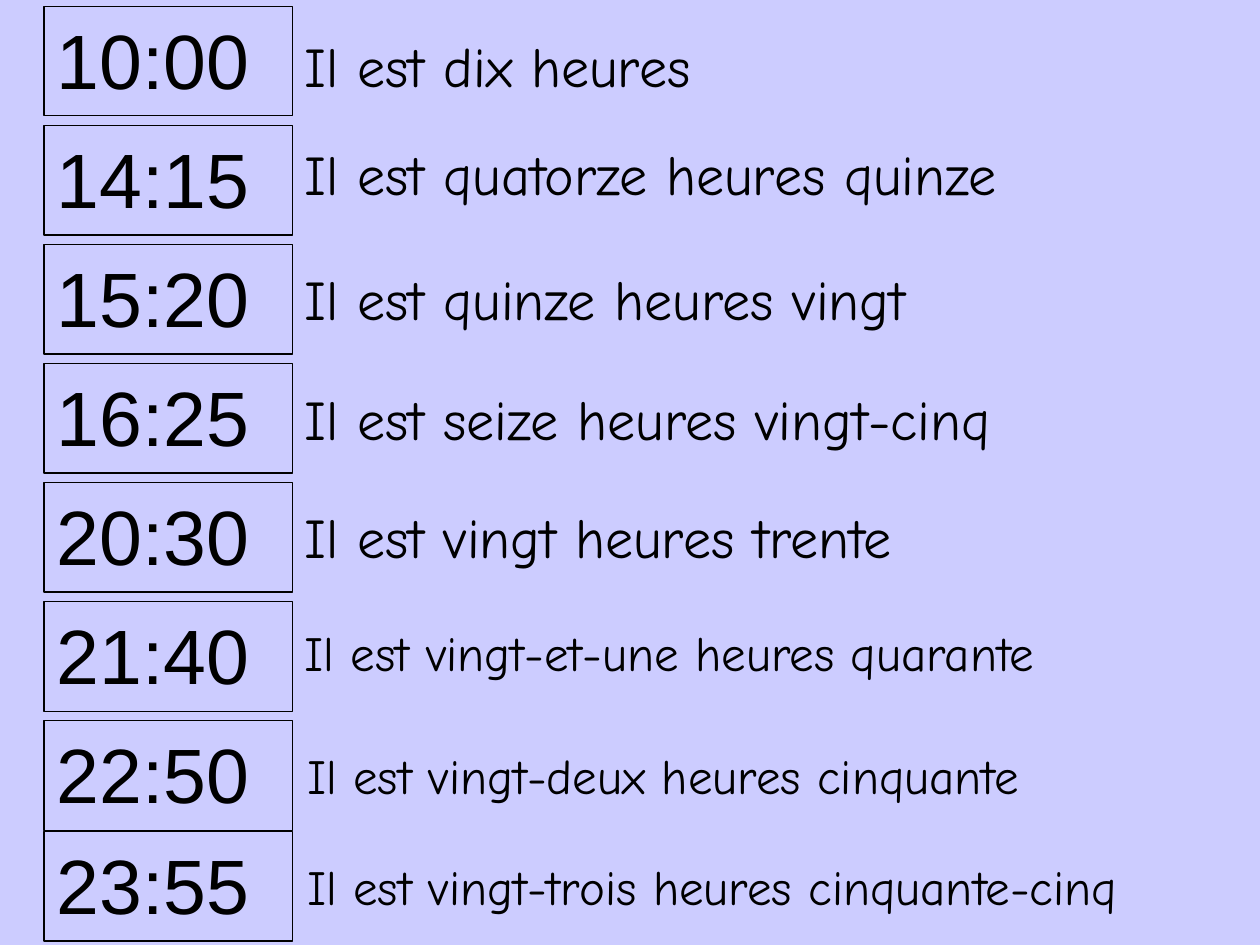
import pptx
import pptx.dml.color
import pptx.enum.shapes
import pptx.enum.text
import pptx.util

Inches = pptx.util.Inches
Pt = pptx.util.Pt

COLORS = {"background": "CCCCFF", "ink": "000000"}
ROW_LEFT, FIRST_TOP, ROW_PITCH, LAST_TOP = 0.35, 0.05, 0.945, 6.6
CLOCK_WIDTH, CLOCK_HEIGHT = 1.97, 0.87

LARGE = {"size": 32, "width": 7.16, "height": 0.64}
SMALL = {"size": 28, "width": 7.4, "height": 0.57}
TIMES = [
    ("10:00", "Il est dix heures", 2.32, 0.2, LARGE),
    ("14:15", "Il est quatorze heures quinze", 2.32, 1.06, LARGE),
    ("15:20", "Il est quinze heures vingt", 2.32, 2.05, LARGE),
    ("16:25", "Il est seize heures vingt-cinq", 2.32, 3, LARGE),
    ("20:30", "Il est vingt heures trente", 2.32, 3.94, LARGE),
    ("21:40", "Il est vingt-et-une heures quarante", 2.32, 4.89, SMALL),
    ("22:50", "Il est vingt-deux heures cinquante", 2.34, 5.87, SMALL),
    ("23:55", "Il est vingt-trois heures cinquante-cinq", 2.34, 6.75, SMALL),
]


def color(name):
    return pptx.dml.color.RGBColor.from_string(COLORS[name])


def write_text(shape, text, *, font, size, space_before=0):
    frame = shape.text_frame
    frame.word_wrap = True
    frame.vertical_anchor = pptx.enum.text.MSO_ANCHOR.TOP
    paragraph = frame.paragraphs[0]
    paragraph.alignment = pptx.enum.text.PP_ALIGN.LEFT
    paragraph.space_before = Pt(space_before)
    run = paragraph.add_run()
    run.text = text
    run.font.name = font
    run.font.size = Pt(size)
    run.font.color.rgb = color("ink")


def add_clock(slide, time, left, top, width, height):
    clock = slide.shapes.add_shape(
        pptx.enum.shapes.MSO_SHAPE.RECTANGLE,
        Inches(left), Inches(top), Inches(width), Inches(height))
    clock.shadow.inherit = False
    clock.fill.background()
    clock.line.color.rgb = color("ink")
    clock.line.width = Pt(0.75)
    write_text(clock, time, font="Arial", size=44, space_before=4)


def add_phrase(slide, sentence, left, top, width, height, size):
    phrase = slide.shapes.add_textbox(
        Inches(left), Inches(top), Inches(width), Inches(height))
    write_text(phrase, sentence, font="Comic Neue", size=size)
    phrase.text_frame.auto_size = pptx.enum.text.MSO_AUTO_SIZE.SHAPE_TO_FIT_TEXT


def main():
    presentation = pptx.Presentation()
    presentation.slide_width = Inches(10)
    presentation.slide_height = Inches(7.5)
    slide = presentation.slides.add_slide(presentation.slide_layouts[6])
    slide.background.fill.solid()
    slide.background.fill.fore_color.rgb = color("background")

    for row, (time, sentence, left, top, style) in enumerate(TIMES):
        clock_top = min(FIRST_TOP + row * ROW_PITCH, LAST_TOP)
        add_clock(slide, time, ROW_LEFT, clock_top, CLOCK_WIDTH, CLOCK_HEIGHT)
        add_phrase(slide, sentence, left, top, **style)

    presentation.save("out.pptx")


if __name__ == "__main__":
    main()
